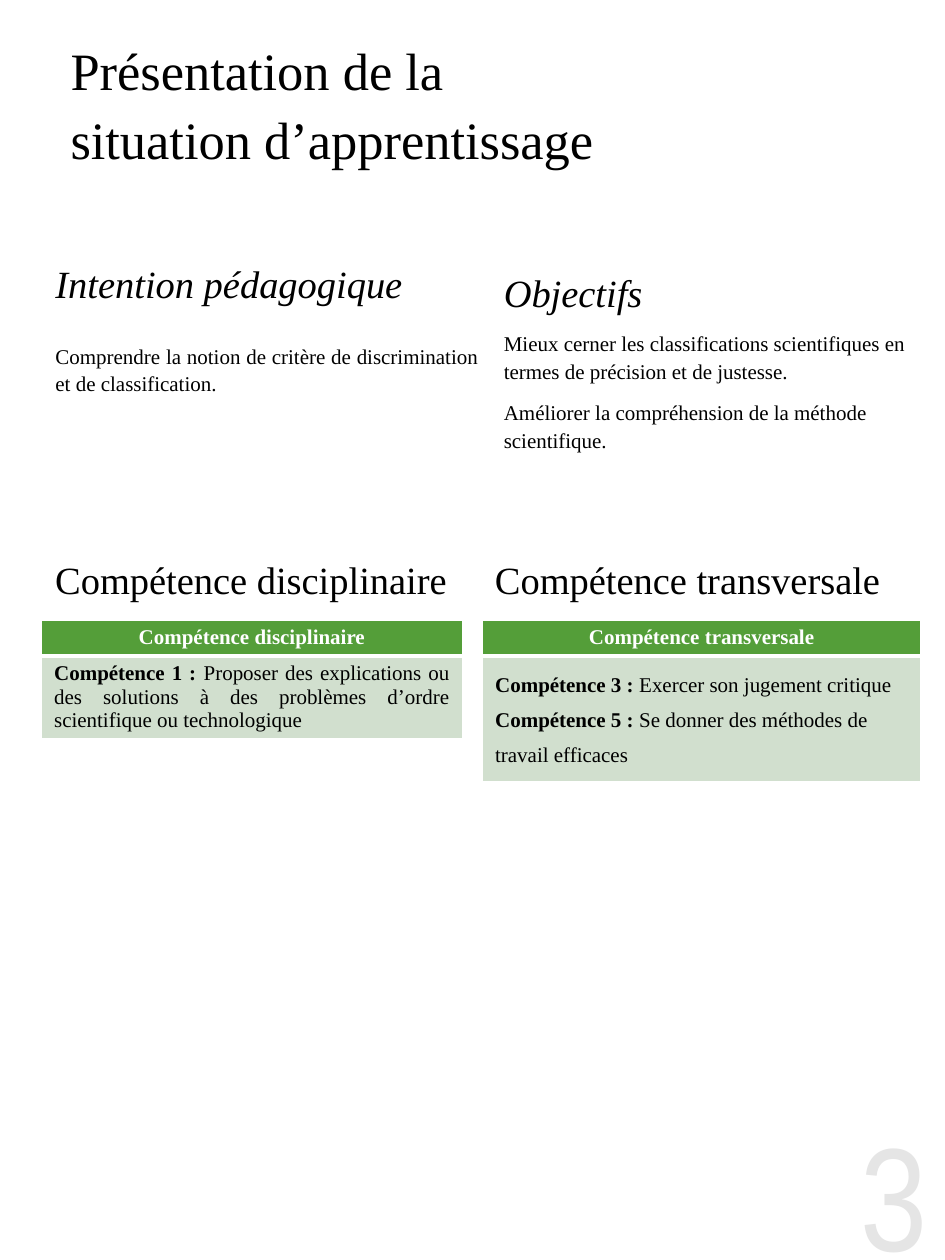
from dataclasses import dataclass

from pptx import Presentation
from pptx.dml.color import RGBColor as Color
from pptx.enum.text import MSO_ANCHOR as Anchor, MSO_AUTO_SIZE as AutoSize, PP_ALIGN as Align
from pptx.oxml.ns import qn
from pptx.util import Inches, Pt


@dataclass(frozen=True)
class Theme:
    font: str = "Times New Roman"
    number_font: str = "Arial Narrow"
    ink: str = "000000"
    white: str = "FFFFFF"
    green: str = "549E39"
    pale_green: str = "D1DFCE"
    pale_grey: str = "E5E5E5"
    title: float = 30
    heading: float = 22
    body: float = 12
    number: float = 84
    line_spacing: float = 1.09


THEME = Theme()


@dataclass(frozen=True)
class Run:
    text: str
    size: float = THEME.body
    bold: bool = False
    italic: bool = False
    color: str = THEME.ink
    font: str = THEME.font


@dataclass(frozen=True)
class Line:
    runs: tuple[Run, ...]
    align: Align = Align.LEFT
    before: float = 0
    spacing: float = THEME.line_spacing


@dataclass(frozen=True)
class Area:
    left: float
    top: float
    width: float
    height: float

    def lengths(self) -> tuple:
        return tuple(Inches(value) for value in (self.left, self.top, self.width, self.height))


@dataclass(frozen=True)
class Skill:
    heading: str
    heading_area: Area
    table_area: Area
    row_heights: tuple[float, float]
    lines: tuple[Line, ...]


def write(frame, lines: tuple[Line, ...]) -> None:
    """Fill a text frame with unbulleted paragraphs."""
    for index, line in enumerate(lines):
        para = frame.paragraphs[0] if index == 0 else frame.add_paragraph()
        properties = para._p.get_or_add_pPr()
        properties.set("marL", "0")
        properties.set("indent", "0")
        para.alignment = line.align
        para.line_spacing = line.spacing
        para.space_before = Pt(line.before)
        properties.append(properties.makeelement(qn("a:buNone"), {}))
        for run in line.runs:
            span = para.add_run()
            span.text = run.text
            span.font.name = run.font
            span.font.size = Pt(run.size)
            span.font.bold = run.bold
            span.font.italic = run.italic
            span.font.color.rgb = Color.from_string(run.color)


def place(box, area: Area, lines: tuple[Line, ...], anchor: Anchor = Anchor.TOP) -> None:
    """Move a placeholder or text box and write its text."""
    box.left, box.top, box.width, box.height = area.lengths()
    frame = box.text_frame
    frame.word_wrap = True
    frame.auto_size = AutoSize.NONE
    frame.vertical_anchor = anchor
    write(frame, lines)


def add_text(slide, area: Area, lines: tuple[Line, ...]):
    box = slide.shapes.add_textbox(*area.lengths())
    place(box, area, lines)
    return box


def set_borders(cell, widths: dict[str, float]) -> None:
    properties = cell._tc.get_or_add_tcPr()
    for side, width in widths.items():
        border = properties.makeelement(qn(f"a:ln{side}"), {"w": str(Pt(width))})
        fill = border.makeelement(qn("a:solidFill"), {})
        fill.append(fill.makeelement(qn("a:srgbClr"), {"val": THEME.white}))
        border.append(fill)
        properties.append(border)


def add_skill(slide, skill: Skill) -> None:
    """Draw a heading and its two-row table."""
    add_text(slide, skill.heading_area, (Line((Run(skill.heading, THEME.heading),)),))
    table = slide.shapes.add_table(2, 1, *skill.table_area.lengths()).table
    header = Line((Run(skill.heading, bold=True, color=THEME.white),), Align.CENTER, spacing=1)
    rows = (
        ((header,), THEME.green, {"L": 1, "R": 1, "T": 1, "B": 3}),
        (skill.lines, THEME.pale_green, {"L": 1, "R": 1, "T": 3, "B": 1}),
    )
    for index, (lines, fill, borders) in enumerate(rows):
        table.rows[index].height = Inches(skill.row_heights[index])
        cell = table.cell(index, 0)
        set_borders(cell, borders)
        cell.fill.solid()
        cell.fill.fore_color.rgb = Color.from_string(fill)
        write(cell.text_frame, lines)


SKILLS = (
    Skill(
        "Compétence disciplinaire",
        Area(0.34, 4.33, 3.56, 0.47),
        Area(0.33, 4.92, 3.34, 0.93),
        (0.28, 0.65),
        (Line((
            Run("Compétence 1 : ", bold=True),
            Run("Proposer des explications ou des solutions à des problèmes "
                "d’ordre scientifique ou technologique"),
        ), Align.JUSTIFY, spacing=1),),
    ),
    Skill(
        "Compétence transversale",
        Area(3.83, 4.33, 3.42, 0.47),
        Area(3.83, 4.92, 3.48, 1.28),
        (0.28, 1.0),
        tuple(
            Line((Run(label, bold=True), Run(text)), spacing=1.5)
            for label, text in (
                ("Compétence 3 : ", "Exercer son jugement critique"),
                ("Compétence 5 : ", "Se donner des méthodes de travail efficaces"),
            )
        ),
    ),
)


def main() -> None:
    deck = Presentation()
    deck.slide_width, deck.slide_height = Inches(7.5), Inches(10)
    page = deck.slides.add_slide(deck.slide_layouts[1])

    # Title
    title = Run("Présentation de la situation d’apprentissage", THEME.title)
    place(page.shapes.title, Area(0.46, 0.33, 4.67, 0.95), (Line((title,)),), Anchor.MIDDLE)

    # Teaching intention and objectives
    place(page.placeholders[1], Area(0.34, 1.98, 3.56, 2.3), (
        Line((Run("Intention pédagogique", THEME.heading, italic=True),)),
        Line((Run("Comprendre la notion de critère de discrimination "
                  "et de classification."),), Align.JUSTIFY, 20),
    ))
    add_text(page, Area(3.9, 2.05, 3.42, 2.23), (
        Line((Run("Objectifs", THEME.heading, italic=True),)),
        Line((Run("Mieux cerner les classifications scientifiques en termes "
                  "de précision et de justesse."),), before=8),
        Line((Run("Améliorer la compréhension de la méthode scientifique."),), before=8),
    ))

    # Skills
    for skill in SKILLS:
        add_skill(page, skill)

    # Page number
    number = Run("3", THEME.number, color=THEME.pale_grey, font=THEME.number_font)
    box = add_text(page, Area(6.36, 8.77, 1, 1.2), (Line((number,), Align.RIGHT, spacing=1),))
    frame = box.text_frame
    frame.margin_left = frame.margin_right = frame.margin_top = frame.margin_bottom = 0

    deck.save("out.pptx")


if __name__ == "__main__":
    main()
